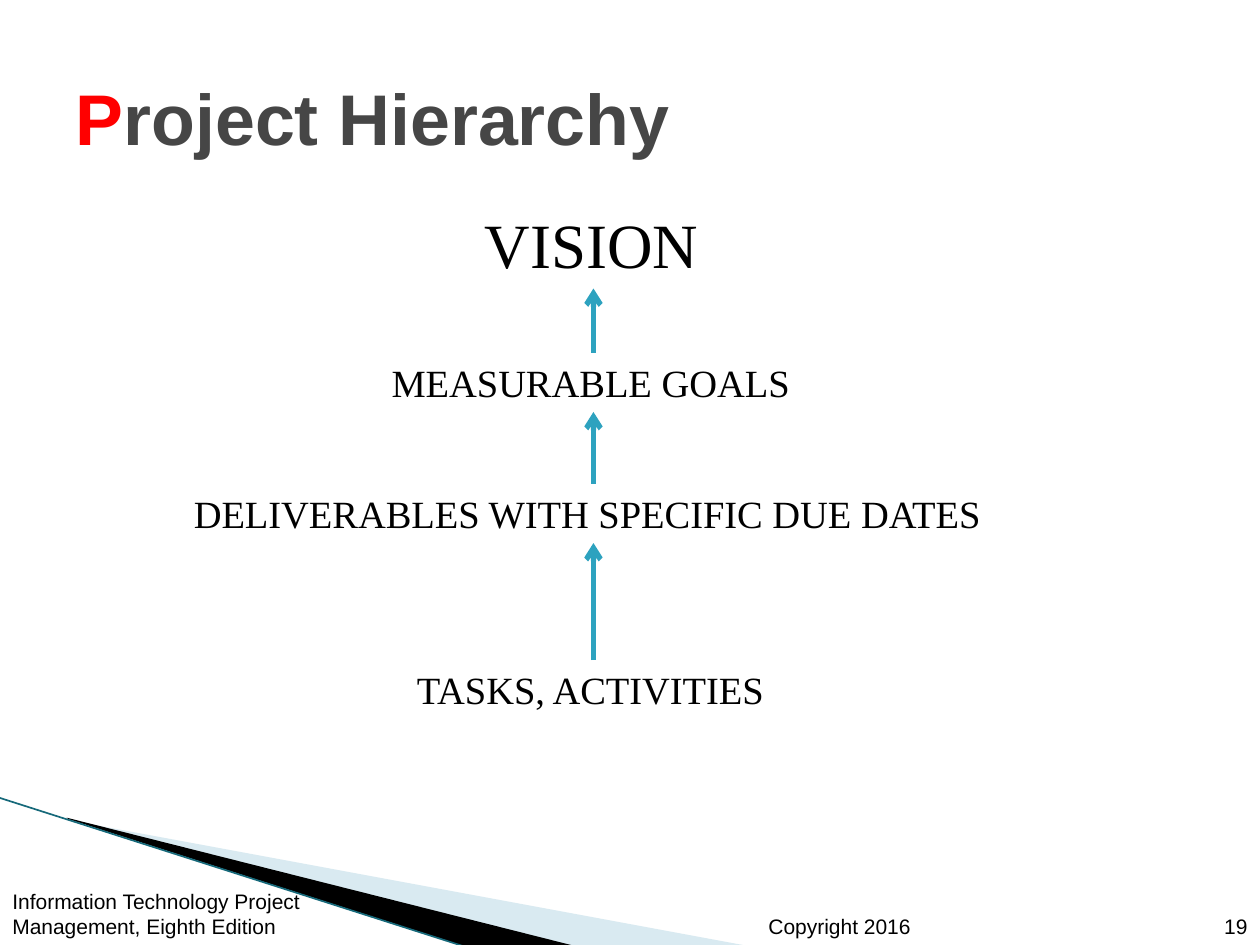
from lxml import etree
from pptx import Presentation
from pptx.dml.color import RGBColor
from pptx.enum import shapes, text
from pptx.oxml import ns
from pptx.util import Inches, Pt

BLACK = RGBColor(0x00, 0x00, 0x00)
RED = RGBColor(0xFF, 0x00, 0x00)
GRAY = RGBColor(0x46, 0x46, 0x46)
TEAL = RGBColor(0x2D, 0xA2, 0xBF)
DARK_TEAL = RGBColor(0x16, 0x69, 0x7A)
PALE_BLUE = RGBColor(0xA0, 0xCB, 0xDC)

TITLE = [("P", RED), ("roject Hierarchy", GRAY)]

# Text, left, top, width, height, size; from the top of the hierarchy down
LEVELS = [
    ("VISION", 3.75, 1.58, 1.91, 0.71, 36),
    ("MEASURABLE GOALS", 3.01, 2.8, 3.4, 0.47, 22),
    ("DELIVERABLES WITH SPECIFIC DUE DATES", 1.44, 3.84, 6.53, 0.47, 22),
    ("TASKS, ACTIVITIES", 3.21, 5.24, 2.99, 0.47, 22),
]
ARROW_X = 4.71

# Text, left, width, alignment
FOOTERS = [
    ("Information Technology Project Management, Eighth Edition", 0, 2.83, text.PP_ALIGN.LEFT),
    ("Copyright 2016", 6, 1.75, text.PP_ALIGN.LEFT),
    ("19", 9.39, 0.61, text.PP_ALIGN.RIGHT),
]
FOOTER_TOP, FOOTER_HEIGHT = 7.1, 0.4

# Corner points, fill, opacity in percent
WEDGES = [
    ([(0.55, 6.51), (5.95, 7.51), (4.56, 7.51), (0.55, 6.5)], PALE_BLUE, 40),
    ([(0.53, 6.49), (4.57, 7.51), (3.72, 7.52), (0.54, 6.5)], BLACK, 100),
]
CORNER_LINE = (-0.01, 6.33, 3.71, 7.52)


def write(shape, runs, size, font="Arial", bold=False, align=text.PP_ALIGN.LEFT,
          anchor=text.MSO_ANCHOR.TOP, wrap=True):
    """Fill a shape with one paragraph of (text, colour) runs."""
    frame = shape.text_frame
    frame.word_wrap = wrap
    frame.auto_size = text.MSO_AUTO_SIZE.NONE
    frame.vertical_anchor = anchor
    paragraph = frame.paragraphs[0]
    paragraph.alignment = align
    for words, color in runs:
        run = paragraph.add_run()
        run.text = words
        run.font.name = font
        run.font.size = Pt(size)
        run.font.bold = bold
        run.font.color.rgb = color


def add_wedge(slide, points, color, opacity):
    start, *rest = [(Inches(x), Inches(y)) for x, y in points]
    builder = slide.shapes.build_freeform(*start)
    builder.add_line_segments(rest)
    wedge = builder.convert_to_shape()
    wedge.shadow.inherit = False
    wedge.fill.solid()
    wedge.fill.fore_color.rgb = color
    wedge.line.fill.background()
    if opacity < 100:
        fill_color = wedge.fill._xPr.find(".//" + ns.qn("a:srgbClr"))
        etree.SubElement(fill_color, ns.qn("a:alpha"), val=str(opacity * 1000))


def add_line(slide, ends, color, width, arrow=False):
    line = slide.shapes.add_connector(
        shapes.MSO_CONNECTOR.STRAIGHT, *[Inches(value) for value in ends])
    line.line.color.rgb = color
    line.line.width = Pt(width)
    if arrow:
        etree.SubElement(line.line._get_or_add_ln(), ns.qn("a:tailEnd"), type="arrow")
    etree.SubElement(line._element.spPr, ns.qn("a:effectLst"))


def add_text(slide, box, words, size, **style):
    shape = slide.shapes.add_textbox(*[Inches(value) for value in box])
    write(shape, [(words, BLACK)], size, **style)


def main():
    presentation = Presentation()
    presentation.slide_width, presentation.slide_height = Inches(10), Inches(7.5)
    slide = presentation.slides.add_slide(presentation.slide_layouts[5])

    for wedge in WEDGES:
        add_wedge(slide, *wedge)
    add_line(slide, CORNER_LINE, DARK_TEAL, 0.95)

    title = slide.shapes.title
    title.left, title.top = Inches(0.5), Inches(0.3)
    title.width, title.height = Inches(9), Inches(1.25)
    write(title, TITLE, 41, bold=True, anchor=text.MSO_ANCHOR.MIDDLE)

    for words, left, width, align in FOOTERS:
        add_text(slide, (left, FOOTER_TOP, width, FOOTER_HEIGHT), words, 12,
                 align=align, anchor=text.MSO_ANCHOR.BOTTOM)

    for words, *box, size in LEVELS:
        add_text(slide, box, words, size, font="Times New Roman", wrap=False)

    for upper, lower in zip(LEVELS, LEVELS[1:]):
        upper_bottom = upper[2] + upper[4]
        add_line(slide, (ARROW_X, lower[2], ARROW_X, upper_bottom), TEAL, 3, arrow=True)

    presentation.save("out.pptx")


if __name__ == "__main__":
    main()
